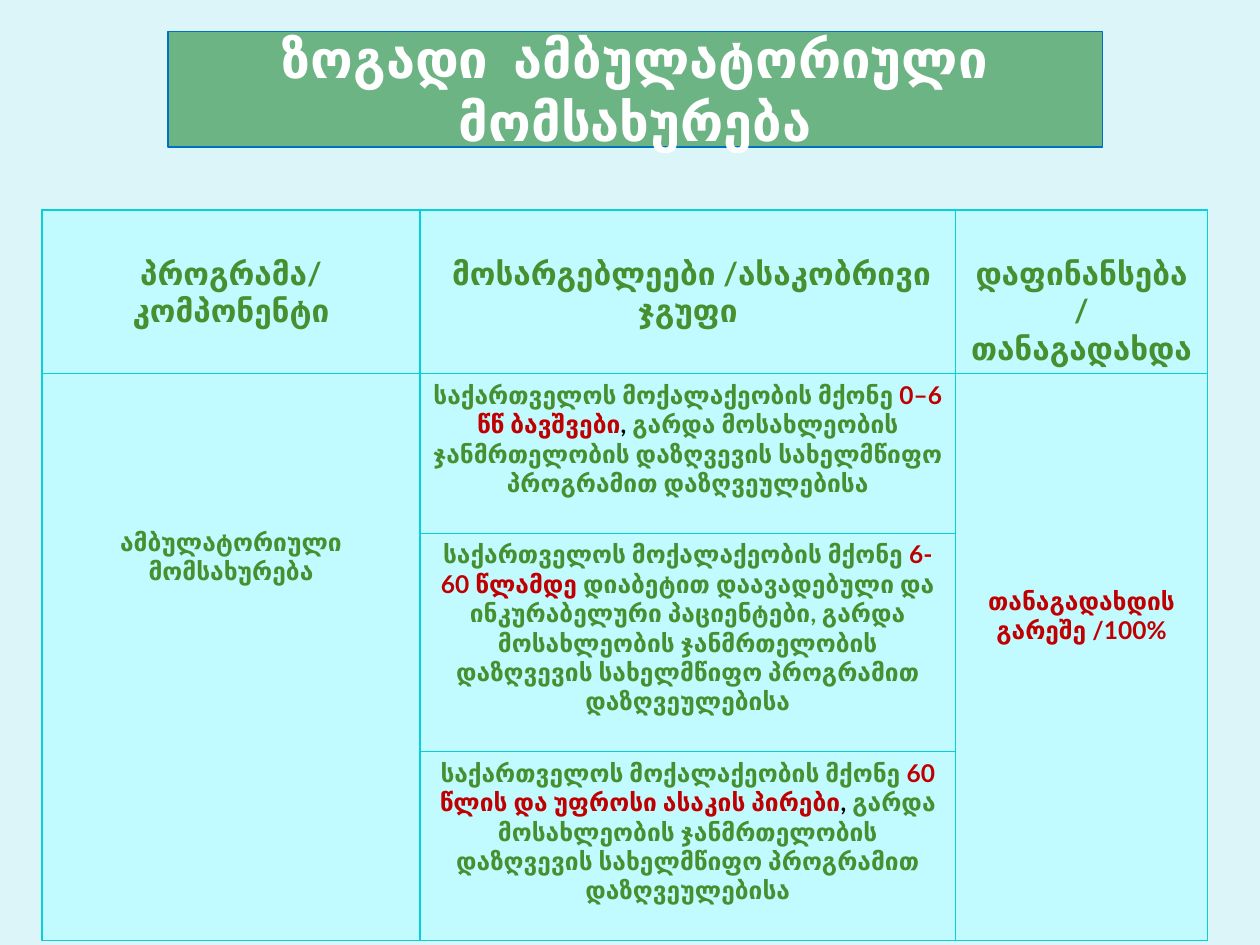
from lxml import etree
from pptx import Presentation
from pptx.dml.color import RGBColor
from pptx.enum import text
from pptx.oxml import ns
from pptx.util import Pt

COLORS = {
    "background": "DBF5F9",
    "banner": "6CB484",
    "banner line": "0070C0",
    "cell": "C1FBFF",
    "border": "06D0D9",
    "white": "FFFFFF",
    "green": "488F30",
    "red": "C00000",
    "black": "000000",
}


def write(frame, *spans, size=14, color="green"):
    """Fill a frame with one centred paragraph; a span is text or (text, color)."""
    para = frame.paragraphs[0]
    para.alignment = text.PP_ALIGN.CENTER
    for item in spans:
        words, name = (item, color) if isinstance(item, str) else item
        span = para.add_run()
        span.text = words
        span.font.name = "Lato"
        span.font.size = Pt(size)
        span.font.bold = True
        span.font.color.rgb = RGBColor.from_string(COLORS[name])


def add_borders(cell, width=0.75):
    properties = cell._tc.get_or_add_tcPr()
    for index, side in enumerate(("lnL", "lnR", "lnT", "lnB")):
        line = etree.Element(ns.qn(f"a:{side}"), w=str(Pt(width)))
        fill = etree.SubElement(line, ns.qn("a:solidFill"))
        etree.SubElement(fill, ns.qn("a:srgbClr"), val=COLORS["border"])
        properties.insert(index, line)


deck = Presentation()
deck.slide_width, deck.slide_height = Pt(720), Pt(540)
page = deck.slides.add_slide(deck.slide_layouts[5])
page.background.fill.solid()
page.background.fill.fore_color.rgb = RGBColor.from_string(COLORS["background"])

# Title banner
title = page.shapes.title
title.left, title.top, title.width, title.height = Pt(96), Pt(18), Pt(534), Pt(66)
title.fill.solid()
title.fill.fore_color.rgb = RGBColor.from_string(COLORS["banner"])
title.line.color.rgb = RGBColor.from_string(COLORS["banner line"])
title.line.width = Pt(0.75)
title.text_frame.auto_size = text.MSO_AUTO_SIZE.NONE
title.text_frame.vertical_anchor = text.MSO_ANCHOR.MIDDLE
write(title.text_frame, "ზოგადი  ამბულატორიული მომსახურება", size=30, color="white")

# Table grid
widths = [216, 306, 144]
heights = [93.6, 91.2, 124.8, 108]
table = page.shapes.add_table(
    len(heights), len(widths), Pt(24), Pt(120), Pt(sum(widths)), Pt(sum(heights))
).table
table.first_row = table.horz_banding = False
for column, width in zip(table.columns, widths):
    column.width = Pt(width)
for row, height in zip(table.rows, heights):
    row.height = Pt(height)
for cell in table.iter_cells():
    cell.fill.solid()
    cell.fill.fore_color.rgb = RGBColor.from_string(COLORS["cell"])
    add_borders(cell)

# Header row
headers = ["პროგრამა/კომპონენტი", " მოსარგებლეები /ასაკობრივი ჯგუფი", "დაფინანსება / თანაგადახდა"]
for column, header in enumerate(headers):
    cell = table.cell(0, column)
    cell.margin_top = Pt(25.2)
    write(cell.text_frame, header, size=18)

# Outer columns, each merged over the three groups
merged = [
    (0, 87.6, "ამბულატორიული მომსახურება", "green"),
    (2, 121.2, "თანაგადახდის გარეშე /100%", "red"),
]
for column, margin, words, color in merged:
    cell = table.cell(1, column)
    cell.merge(table.cell(3, column))
    cell.margin_top = Pt(margin)
    write(cell.text_frame, words, color=color)

# Beneficiary groups
citizens = "საქართველოს მოქალაქეობის მქონე "
exclusion = "გარდა მოსახლეობის ჯანმრთელობის დაზღვევის სახელმწიფო პროგრამით დაზღვეულებისა"
comma = (", ", "black")
groups = [
    [("0–6 წწ ბავშვები", "red"), comma, exclusion],
    [("6-60 წლამდე ", "red"), "დიაბეტით დაავადებული და ინკურაბელური პაციენტები, " + exclusion],
    [("60 წლის და უფროსი ასაკის პირები", "red"), comma, exclusion],
]
for row, group in enumerate(groups, start=1):
    write(table.cell(row, 1).text_frame, citizens, *group)

deck.save("out.pptx")
